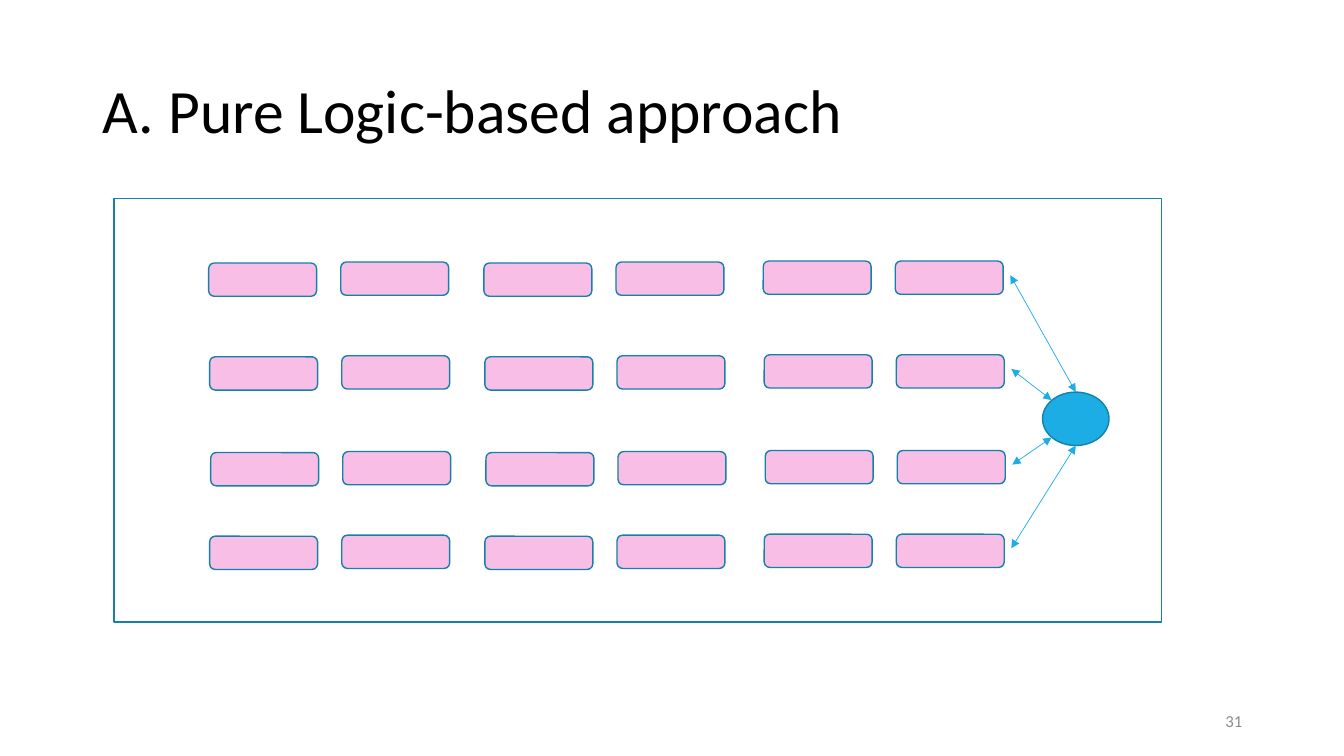
from dataclasses import dataclass

from lxml import etree
from pptx import Presentation
from pptx.dml.color import RGBColor
from pptx.enum.shapes import MSO_CONNECTOR, MSO_SHAPE
from pptx.enum.text import MSO_ANCHOR, PP_ALIGN
from pptx.oxml.ns import qn
from pptx.shapes.autoshape import Shape
from pptx.slide import Slide
from pptx.text.text import TextFrame
from pptx.util import Inches, Pt

RECTANGLE = MSO_SHAPE.RECTANGLE
ROUNDED = MSO_SHAPE.ROUNDED_RECTANGLE
OVAL = MSO_SHAPE.OVAL
STRAIGHT = MSO_CONNECTOR.STRAIGHT
MIDDLE = MSO_ANCHOR.MIDDLE
LEFT, RIGHT = PP_ALIGN.LEFT, PP_ALIGN.RIGHT


@dataclass(frozen=True)
class Theme:
    font: str = "Calibri"
    title_size: float = 44
    number_size: float = 12
    outline_width: float = 1
    arrow_width: float = 0.5
    title_color: str = "000000"
    number_color: str = "8C8C8C"
    module_color: str = "F9BEE5"
    outline_color: str = "1580A9"
    hub_color: str = "1CADE4"


@dataclass(frozen=True)
class Box:
    left: float
    top: float
    width: float
    height: float


@dataclass(frozen=True)
class Row:
    left: float
    top: float
    hub_x: float
    hub_y: float


@dataclass(frozen=True)
class Column:
    offset: float
    rise: float


THEME = Theme()
TITLE = Box(0.92, 0.4, 11.5, 1.45)
PAGE_NUMBER = Box(9.42, 6.95, 3, 0.4)
FRAME = Box(1.13, 1.97, 10.39, 4.2)
HUB = Box(10.34, 3.89, 0.66, 0.53)
MODULE_WIDTH, MODULE_HEIGHT = 1.07, 0.33
ARROW_OFFSET, ARROW_DROP = 7.95, 0.12

# Each row ends in an arrow that meets the hub at its own point
ROWS = [
    Row(2.07, 2.61, 10.67, 3.89),
    Row(2.08, 3.54, 10.43, 3.97),
    Row(2.09, 4.49, 10.43, 4.34),
    Row(2.08, 5.32, 10.67, 4.42),
]
COLUMNS = [
    Column(0, 0),
    Column(1.31, 0.01),
    Column(2.73, 0),
    Column(4.04, 0.01),
    Column(5.5, 0.02),
    Column(6.81, 0.02),
]


def write_text(frame: TextFrame, text: str, *, size: float, color: str,
               align: PP_ALIGN = LEFT, line_spacing: float = 1.0) -> None:
    frame.word_wrap = True
    frame.vertical_anchor = MIDDLE
    paragraph = frame.paragraphs[0]
    paragraph.alignment = align
    paragraph.line_spacing = line_spacing
    run = paragraph.add_run()
    run.text = text
    run.font.name = THEME.font
    run.font.size = Pt(size)
    run.font.color.rgb = RGBColor.from_string(color)


def add_box(slide: Slide, kind: MSO_SHAPE, box: Box, fill: str | None = None) -> Shape:
    shape = slide.shapes.add_shape(kind, Inches(box.left), Inches(box.top),
                                   Inches(box.width), Inches(box.height))
    shape.shadow.inherit = False
    if fill is None:
        shape.fill.background()
    else:
        shape.fill.solid()
        shape.fill.fore_color.rgb = RGBColor.from_string(fill)
    shape.line.color.rgb = RGBColor.from_string(THEME.outline_color)
    shape.line.width = Pt(THEME.outline_width)
    return shape


def add_double_arrow(slide: Slide, row: Row) -> None:
    connector = slide.shapes.add_connector(
        STRAIGHT, Inches(row.left + ARROW_OFFSET), Inches(row.top + ARROW_DROP),
        Inches(row.hub_x), Inches(row.hub_y))
    connector.line.color.rgb = RGBColor.from_string(THEME.hub_color)
    connector.line.width = Pt(THEME.arrow_width)
    properties = connector.element.spPr
    outline = properties.find(qn("a:ln"))
    for end in ("a:headEnd", "a:tailEnd"):
        etree.SubElement(outline, qn(end), type="triangle")
    etree.SubElement(properties, qn("a:effectLst"))


def main() -> None:
    presentation = Presentation()
    presentation.slide_width = Inches(13.33)
    presentation.slide_height = Inches(7.5)
    slide = presentation.slides.add_slide(presentation.slide_layouts[5])

    # Title and page number
    title = slide.shapes.title
    title.left, title.top = Inches(TITLE.left), Inches(TITLE.top)
    title.width, title.height = Inches(TITLE.width), Inches(TITLE.height)
    write_text(title.text_frame, "A. Pure Logic-based approach", size=THEME.title_size,
               color=THEME.title_color, line_spacing=0.9)
    number = slide.shapes.add_textbox(
        Inches(PAGE_NUMBER.left), Inches(PAGE_NUMBER.top),
        Inches(PAGE_NUMBER.width), Inches(PAGE_NUMBER.height))
    write_text(number.text_frame, "31", size=THEME.number_size,
               color=THEME.number_color, align=RIGHT)

    # Frame, grid of modules and hub
    add_box(slide, RECTANGLE, FRAME)
    for row in ROWS:
        for column in COLUMNS:
            module = Box(row.left + column.offset, row.top - column.rise,
                         MODULE_WIDTH, MODULE_HEIGHT)
            add_box(slide, ROUNDED, module, THEME.module_color)
    add_box(slide, OVAL, HUB, THEME.hub_color)

    # Arrows between the rows and the hub
    for row in ROWS:
        add_double_arrow(slide, row)

    presentation.save("out.pptx")


if __name__ == "__main__":
    main()
